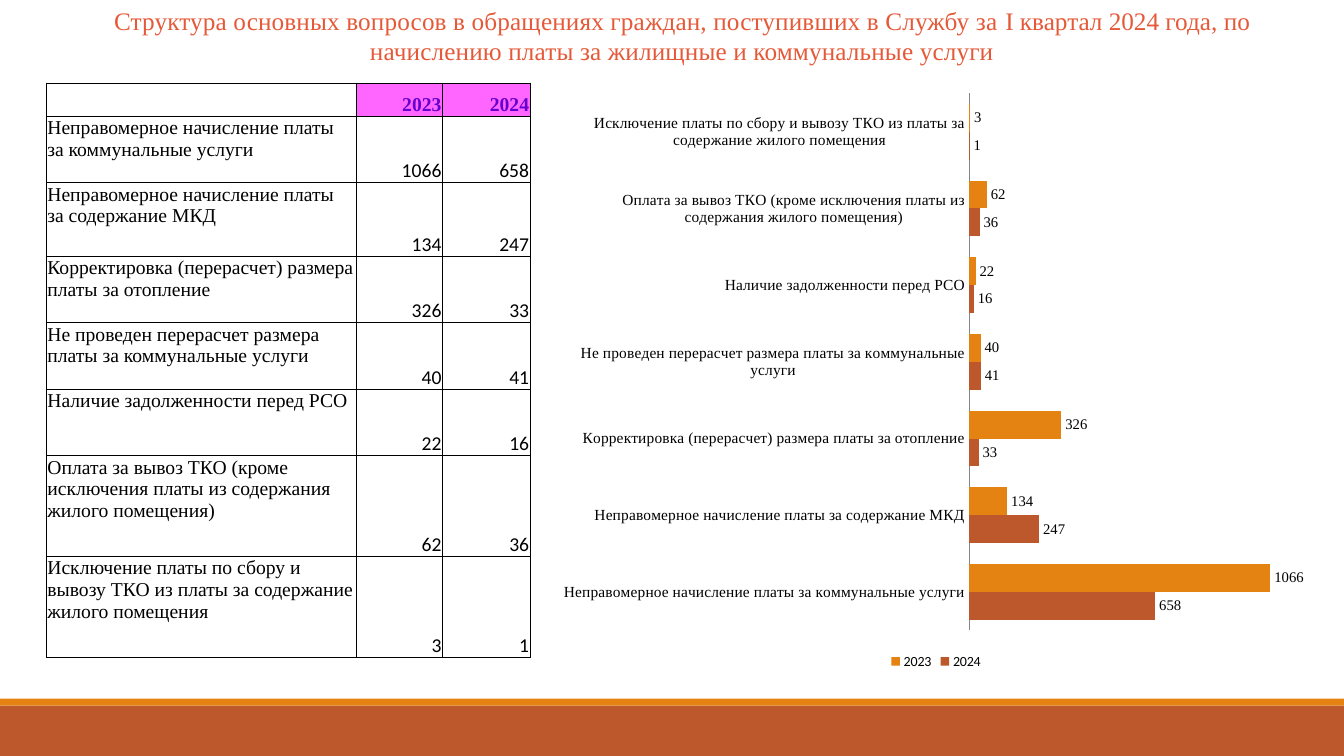
"""Build a slide comparing citizens' appeals on utility charges in 2023 and 2024."""
from dataclasses import dataclass

import lxml.etree
import pptx
import pptx.chart.data
import pptx.dml.color
import pptx.enum.chart
import pptx.enum.shapes
import pptx.enum.text
import pptx.oxml
import pptx.oxml.ns
import pptx.util

COLOURS = {"rust": "BD582C", "orange": "E48312", "title": "E65938", "black": "000000",
           "white": "FFFFFF", "pink": "FF66FF", "violet": "6600CC"}
SERIF, SANS = "Times New Roman", "Calibri"
WIDTH, HEIGHT = pptx.util.Inches(13.33), pptx.util.Inches(7.5)
ALIGN = pptx.enum.text.PP_ALIGN
ANCHOR = pptx.enum.text.MSO_ANCHOR


@dataclass(frozen=True)
class Region:
    """Place on the slide, in percent of its width and height."""
    left: float
    top: float
    width: float
    height: float

    def box(self) -> tuple[int, int, int, int]:
        return across(self.left), down(self.top), across(self.width), down(self.height)


@dataclass(frozen=True)
class Band:
    region: Region
    colour: str


@dataclass(frozen=True)
class Question:
    name: str
    year_2023: int
    year_2024: int
    row_height: float


BANDS = [Band(Region(0, 93.33, 100, 6.67), "rust"),
         Band(Region(0, 92.4, 100, 0.93), "orange")]
TITLE_REGION = Region(3, 0, 95.5, 9.47)
CHART_REGION = Region(40.8, 10.8, 57.7, 78.27)
TABLE_REGION = Region(3.45, 10.97, 36, 76)
COLUMN_WIDTHS = [23.03, 6.45, 6.52]
HEADER_HEIGHT = 4.4
TITLE = [("Структура основных вопросов в обращениях граждан, поступивших в Службу за ", 10),
         ("I квартал 2024 года, ", 0),
         ("по начислению платы за жилищные и коммунальные услуги", 10)]
QUESTIONS = [
    Question("Неправомерное начисление платы за коммунальные услуги", 1066, 658, 8.8),
    Question("Неправомерное начисление платы за содержание МКД", 134, 247, 9.73),
    Question("Корректировка (перерасчет) размера платы за отопление", 326, 33, 8.8),
    Question("Не проведен перерасчет размера платы за коммунальные услуги", 40, 41, 8.8),
    Question("Наличие задолженности перед РСО", 22, 16, 8.8),
    Question("Оплата за вывоз ТКО (кроме исключения платы из содержания жилого помещения)",
             62, 36, 13.33),
    Question("Исключение платы по сбору и вывозу ТКО из платы за содержание жилого помещения",
             3, 1, 13.33),
]


def across(percent: float) -> int:
    return round(WIDTH * percent / 100)


def down(percent: float) -> int:
    return round(HEIGHT * percent / 100)


def colour_of(name: str) -> pptx.dml.color.RGBColor:
    return pptx.dml.color.RGBColor.from_string(COLOURS[name])


def style_font(font, size: float, face: str, colour: str = "black", bold: bool = False) -> None:
    font.size = pptx.util.Pt(size)
    font.name = face
    font.bold = bold
    font.color.rgb = colour_of(colour)


def write_text(para, text: str, *, size: float, face: str = SERIF, colour: str = "black",
               bold: bool = False, align=ALIGN.LEFT, spacing: int = 0) -> None:
    para.alignment = align
    span = para.add_run()
    span.text = text
    style_font(span.font, size, face, colour, bold)
    if spacing:
        span._r.get_or_add_rPr().set("spc", str(spacing))


def draw_band(page, band: Band) -> None:
    bar = page.shapes.add_shape(pptx.enum.shapes.MSO_SHAPE.RECTANGLE, *band.region.box())
    bar.shadow.inherit = False
    bar.fill.solid()
    bar.fill.fore_color.rgb = colour_of(band.colour)
    bar.line.fill.background()


def draw_title(page) -> None:
    frame = page.shapes.add_textbox(*TITLE_REGION.box()).text_frame
    frame.word_wrap = True
    for text, spacing in TITLE:
        write_text(frame.paragraphs[0], text, size=18, colour="title",
                   align=ALIGN.CENTER, spacing=spacing)


def outline_cell(cell) -> None:
    properties = cell._tc.get_or_add_tcPr()
    for index, side in enumerate(("lnL", "lnR", "lnT", "lnB")):
        properties.insert(index, pptx.oxml.parse_xml(
            f'<a:{side} {pptx.oxml.ns.nsdecls("a")} w="6350"><a:solidFill>'
            f'<a:srgbClr val="{COLOURS["black"]}"/></a:solidFill></a:{side}>'))


def fill_cell(cell, text: str, *, fill: str = "white", anchor=ANCHOR.BOTTOM,
              align=ALIGN.RIGHT, **text_format) -> None:
    cell.margin_left = cell.margin_right = cell.margin_top = pptx.util.Inches(0.01)
    cell.margin_bottom = 0
    cell.vertical_anchor = anchor
    cell.fill.solid()
    cell.fill.fore_color.rgb = colour_of(fill)
    outline_cell(cell)
    if text:
        write_text(cell.text_frame.paragraphs[0], text, size=14, align=align, **text_format)


def draw_table(page) -> None:
    table = page.shapes.add_table(len(QUESTIONS) + 1, len(COLUMN_WIDTHS),
                                  *TABLE_REGION.box()).table
    table.first_row = table.horz_banding = False
    for column, width in zip(table.columns, COLUMN_WIDTHS):
        column.width = across(width)
    table.rows[0].height = down(HEADER_HEIGHT)
    fill_cell(table.cell(0, 0), "")
    for index, year in enumerate(("2023", "2024"), start=1):
        fill_cell(table.cell(0, index), year, fill="pink", colour="violet", bold=True)
    for index, question in enumerate(QUESTIONS, start=1):
        table.rows[index].height = down(question.row_height)
        fill_cell(table.cell(index, 0), question.name, anchor=ANCHOR.TOP, align=ALIGN.LEFT)
        for column, count in enumerate((question.year_2023, question.year_2024), start=1):
            fill_cell(table.cell(index, column), str(count), face=SANS)


def draw_chart(page) -> None:
    data = pptx.chart.data.CategoryChartData()
    data.categories = [question.name for question in QUESTIONS]
    data.add_series("2024", [question.year_2024 for question in QUESTIONS])
    data.add_series("2023", [question.year_2023 for question in QUESTIONS])
    chart = page.shapes.add_chart(pptx.enum.chart.XL_CHART_TYPE.BAR_CLUSTERED,
                                  *CHART_REGION.box(), data).chart
    style_font(chart.font, 10, SANS)
    chart.has_title = False
    chart.has_legend = True
    chart.legend.position = pptx.enum.chart.XL_LEGEND_POSITION.BOTTOM
    chart.legend.include_in_layout = False
    chart.value_axis.visible = False
    chart.value_axis.has_major_gridlines = False
    axis = chart.category_axis
    axis.major_tick_mark = pptx.enum.chart.XL_TICK_MARK.NONE
    axis.format.line.color.rgb = pptx.dml.color.RGBColor.from_string("868686")
    style_font(axis.tick_labels.font, 11, SERIF)
    plot = chart.plots[0]
    plot.gap_width = 75
    plot.overlap = 0
    plot.vary_by_categories = False
    for series, colour in zip(plot.series, ("rust", "orange")):
        series.format.fill.solid()
        series.format.fill.fore_color.rgb = colour_of(colour)
        series.data_labels.show_value = True
        style_font(series.data_labels.font, 10.5, SERIF)


def main() -> None:
    deck = pptx.Presentation()
    deck.slide_width, deck.slide_height = WIDTH, HEIGHT
    page = deck.slides.add_slide(deck.slide_layouts[6])
    for band in BANDS:
        draw_band(page, band)
    draw_title(page)
    draw_chart(page)
    draw_table(page)
    deck.save("out.pptx")


if __name__ == "__main__":
    main()
